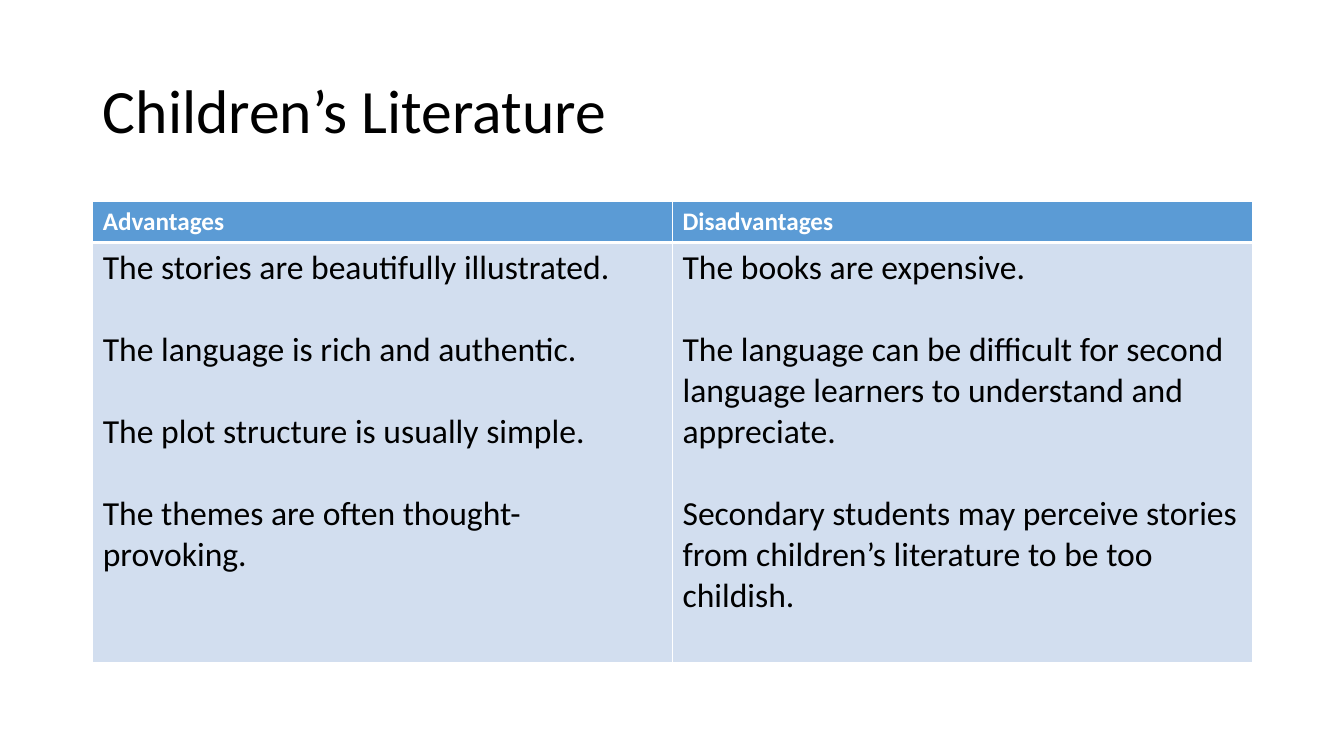
from lxml.etree import SubElement
from pptx import Presentation
from pptx.dml.color import RGBColor
from pptx.enum.text import MSO_ANCHOR as Anchor, PP_ALIGN as Align
from pptx.oxml.ns import qn
from pptx.util import Inches, Pt

BLACK = RGBColor(0x00, 0x00, 0x00)
WHITE = RGBColor(0xFF, 0xFF, 0xFF)
HEADER_BLUE = RGBColor(0x5B, 0x9B, 0xD5)
PALE_BLUE = RGBColor(0xD2, 0xDE, 0xEF)
FONT = "Calibri"
LEFT, WIDTH = 0.92, 11.5
HEADER_HEIGHT, BODY_HEIGHT = 0.4, 4.17
POINT_GAP = 29.3  # one line of 24 pt text

COLUMNS = {
    "Advantages": [
        "The stories are beautifully illustrated.",
        "The language is rich and authentic.",
        "The plot structure is usually simple.",
        "The themes are often thought-provoking.",
    ],
    "Disadvantages": [
        "The books are expensive.",
        "The language can be difficult for second language learners "
        "to understand and appreciate.",
        "Secondary students may perceive stories from children’s "
        "literature to be too childish.",
    ],
}


def format_text(para, size, color, bold=False):
    for span in para.runs:
        span.font.name = FONT
        span.font.size = Pt(size)
        span.font.bold = bold
        span.font.color.rgb = color


def add_title(page, text):
    title = page.shapes.title
    title.left, title.top = Inches(LEFT), Inches(0.4)
    title.width, title.height = Inches(WIDTH), Inches(1.45)
    frame = title.text_frame
    frame.text = text
    frame.vertical_anchor = Anchor.MIDDLE
    para = frame.paragraphs[0]
    para.alignment = Align.LEFT
    para.line_spacing = 0.9
    format_text(para, 44, BLACK)


def set_borders(cell, top, bottom):
    properties = cell._tc.get_or_add_tcPr()
    for side, points in (("L", 1), ("R", 1), ("T", top), ("B", bottom)):
        line = SubElement(properties, qn(f"a:ln{side}"), w=str(Pt(points)))
        fill = SubElement(line, qn("a:solidFill"))
        SubElement(fill, qn("a:srgbClr"), val=str(WHITE))


def fill_cell(cell, lines, size, color, background, top, bottom, bold=False):
    # Borders come before the fill in the cell properties
    set_borders(cell, top, bottom)
    cell.fill.solid()
    cell.fill.fore_color.rgb = background
    cell.text_frame.text = "\n".join(lines)
    for index, para in enumerate(cell.text_frame.paragraphs):
        para.space_before = Pt(POINT_GAP if index else 0)
        format_text(para, size, color, bold)


def add_comparison(page, columns):
    table = page.shapes.add_table(
        2, len(columns), Inches(LEFT), Inches(2),
        Inches(WIDTH), Inches(HEADER_HEIGHT + BODY_HEIGHT)).table
    table.rows[0].height = Inches(HEADER_HEIGHT)
    table.rows[1].height = Inches(BODY_HEIGHT)
    for index, (heading, points) in enumerate(columns.items()):
        table.columns[index].width = Inches(WIDTH / len(columns))
        fill_cell(table.cell(0, index), [heading], 18, WHITE, HEADER_BLUE,
                  top=1, bottom=3, bold=True)
        fill_cell(table.cell(1, index), points, 24, BLACK, PALE_BLUE,
                  top=3, bottom=1)


def main():
    deck = Presentation()
    deck.slide_width, deck.slide_height = Inches(13.33), Inches(7.5)
    page = deck.slides.add_slide(deck.slide_layouts[5])
    add_title(page, "Children’s Literature")
    add_comparison(page, COLUMNS)
    deck.save("out.pptx")


if __name__ == "__main__":
    main()
